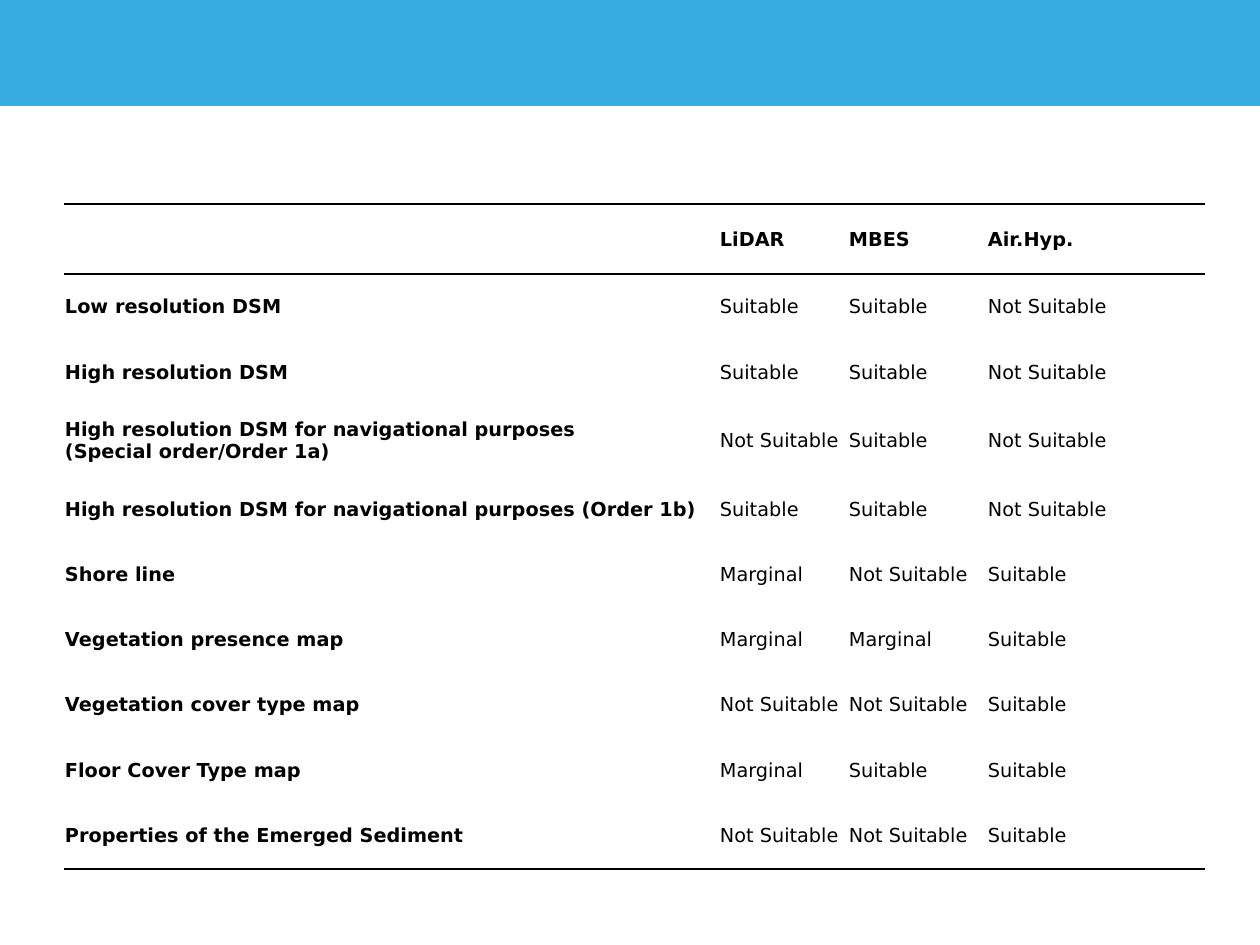
import pptx
import pptx.dml.color
import pptx.enum.shapes
import pptx.enum.text
import pptx.oxml
import pptx.oxml.ns
import pptx.util

PX = 914400 // 126
BLUE = pptx.dml.color.RGBColor(0x37, 0xAC, 0xDE)
BLACK = pptx.dml.color.RGBColor(0, 0, 0)
FONT = "DejaVu Sans"
NO_GRID_STYLE = "{2D5ABB26-0587-4C30-8999-92F81FD0307C}"

COL_WIDTHS = [655, 129, 139, 218]
ROW_HEIGHTS = [70, 65, 66, 71, 66, 65, 65, 66, 65, 66]
S, M, N = "Suitable", "Marginal", "Not Suitable"
ROWS = [
    ("", "LiDAR", "MBES", "Air.Hyp."),
    ("Low resolution DSM", S, S, N),
    ("High resolution DSM", S, S, N),
    ("High resolution DSM for navigational purposes \n(Special order/Order 1a)", N, S, N),
    ("High resolution DSM for navigational purposes (Order 1b)", S, S, N),
    ("Shore line", M, N, S),
    ("Vegetation presence map", M, M, S),
    ("Vegetation cover type map", N, N, S),
    ("Floor Cover Type map", M, S, S),
    ("Properties of the Emerged Sediment", N, N, S),
]


def px(n):
    return pptx.util.Emu(n * PX)


def add_banner(s):
    sp = s.shapes.add_shape(pptx.enum.shapes.MSO_SHAPE.RECTANGLE, 0, 0, px(1260), px(105))
    sp.shadow.inherit = False
    sp.fill.solid()
    sp.fill.fore_color.rgb = BLUE
    sp.line.color.rgb = BLUE
    sp.line.width = pptx.util.Pt(0.75)


def add_borders(cell, sides):
    """Draw 1 pt lines on the given sides, listed in schema order (T, B)."""
    tc_pr = cell._tc.get_or_add_tcPr()
    for i, side in enumerate(sides):
        tc_pr.insert(i, pptx.oxml.parse_xml(
            f'<a:ln{side} {pptx.oxml.ns.nsdecls("a")} w="12700"><a:solidFill>'
            f'<a:srgbClr val="{BLACK}"/></a:solidFill></a:ln{side}>'))


def fill_cell(cell, text, bold):
    cell.fill.background()
    cell.vertical_anchor = pptx.enum.text.MSO_ANCHOR.MIDDLE
    cell.margin_left = cell.margin_right = cell.margin_top = px(1)
    cell.margin_bottom = 0
    p = cell.text_frame.paragraphs[0]
    p.text = text
    p.font.name = FONT
    p.font.size = pptx.util.Pt(11)
    p.font.bold = bold
    p.font.color.rgb = BLACK


def add_suitability_table(s):
    frame = s.shapes.add_table(len(ROWS), len(COL_WIDTHS), px(64), px(204),
                               px(sum(COL_WIDTHS)), px(sum(ROW_HEIGHTS)))
    table = frame.table
    table.first_row = table.horz_banding = False
    table._tbl.tblPr.find(pptx.oxml.ns.qn("a:tableStyleId")).text = NO_GRID_STYLE
    for col, width in zip(table.columns, COL_WIDTHS):
        col.width = px(width)
    borders = {0: "TB", len(ROWS) - 1: "B"}
    for r, (values, height) in enumerate(zip(ROWS, ROW_HEIGHTS)):
        table.rows[r].height = px(height)
        for c, text in enumerate(values):
            cell = table.cell(r, c)
            fill_cell(cell, text, bold=r == 0 or c == 0)
            add_borders(cell, borders.get(r, ""))


def main():
    prs = pptx.Presentation()
    prs.slide_width, prs.slide_height = px(1260), px(945)
    s = prs.slides.add_slide(prs.slide_layouts[6])
    add_banner(s)
    add_suitability_table(s)
    prs.save("out.pptx")


if __name__ == "__main__":
    main()
